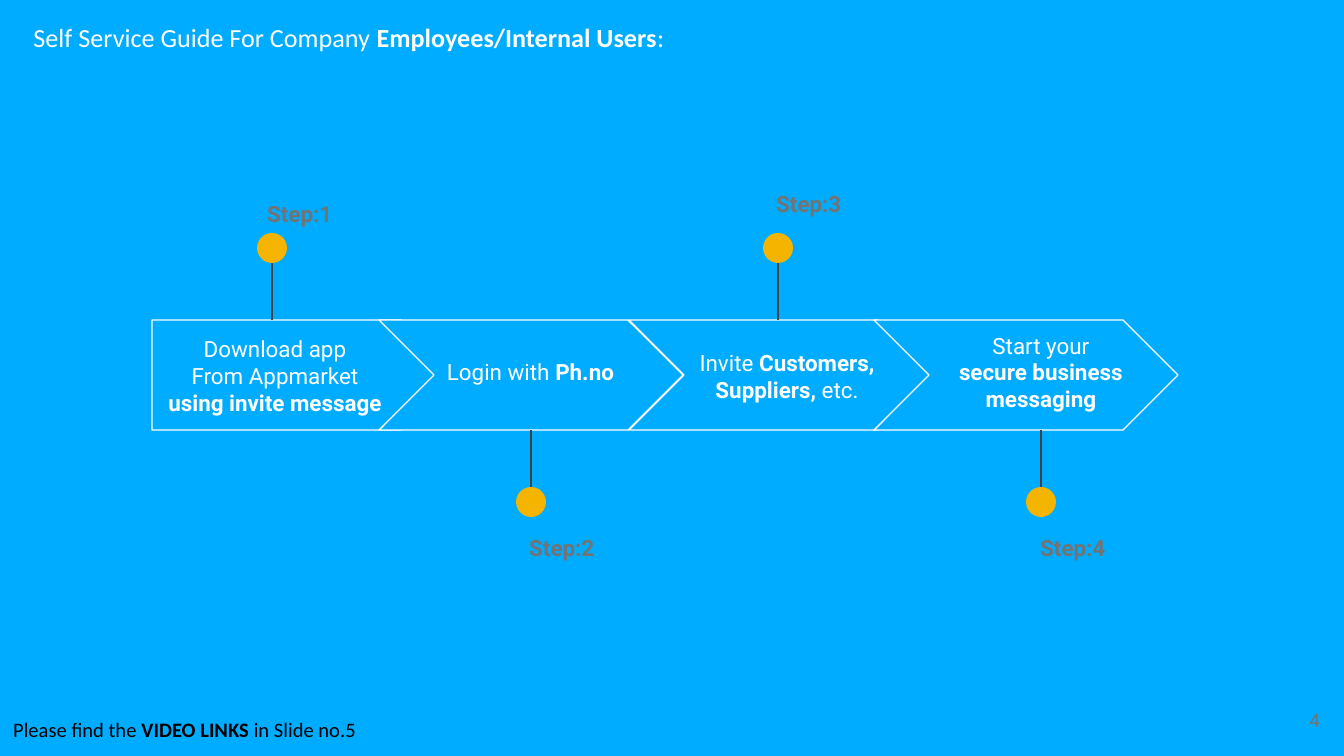
from lxml import etree
from pptx import Presentation
from pptx import util as u
from pptx.dml.color import RGBColor
from pptx.enum import shapes, text
from pptx.oxml.ns import qn

WIDE, HIGH = 1344, 756
SCALE = u.Inches(10) / WIDE
HUES = {"sky": "00ACFF", "white": "FFFFFF", "gold": "F4B400",
        "stem": "424242", "gray": "737373", "black": "000000"}
KIND = shapes.MSO_SHAPE
ALIGN = text.PP_ALIGN
ANCHOR = text.MSO_ANCHOR

BAR_TOP, BAR_WIDE, BAR_HIGH = 320, 304, 110
DOT = 30
STEM = 72


def px(*nums):
    return [u.Emu(round(n * SCALE)) for n in nums]


def hue(name):
    return RGBColor.from_string(HUES[name])


class Deck:
    def __init__(self):
        self.show = Presentation()
        self.show.slide_width, self.show.slide_height = px(WIDE, HIGH)
        self.slide = self.show.slides.add_slide(self.show.slide_layouts[5])
        self.items = self.slide.shapes
        fill = self.slide.background.fill
        fill.solid()
        fill.fore_color.rgb = hue("sky")

    def shape(self, kind, box, fill, line=None):
        item = self.items.add_shape(kind, *px(*box))
        item.shadow.inherit = False
        item.fill.solid()
        item.fill.fore_color.rgb = hue(fill)
        if line:
            item.line.color.rgb = hue(line)
            item.line.width = u.Pt(0.75)
        else:
            item.line.fill.background()
        return item

    def line(self, x, start, end):
        item = self.items.add_connector(
            shapes.MSO_CONNECTOR.STRAIGHT, *px(x, start, x, end))
        item.line.color.rgb = hue("stem")
        item.line.width = u.Pt(0.75)
        etree.SubElement(item._element.spPr, qn("a:effectLst"))

    def label(self, item, words, size, color, font="Roboto",
              align=ALIGN.LEFT, anchor=ANCHOR.TOP, space=None):
        """Fill a frame; words between asterisks are bold."""
        frame = item.text_frame
        frame.word_wrap = True
        frame.auto_size = text.MSO_AUTO_SIZE.NONE
        frame.vertical_anchor = anchor
        frame.margin_left = frame.margin_right = u.Inches(0.1)
        frame.margin_top = frame.margin_bottom = u.Inches(0.1)
        for i, row in enumerate(words.split("\n")):
            par = frame.add_paragraph() if i else frame.paragraphs[0]
            par.alignment = align
            par.line_spacing = space
            for j, part in enumerate(row.split("*")):
                if not part:
                    continue
                run = par.add_run()
                run.text = part
                run.font.name = font
                run.font.size = u.Pt(size)
                run.font.bold = j % 2 == 1
                run.font.color.rgb = hue(color)

    def text(self, box, words, size, color, **style):
        self.label(self.items.add_textbox(*px(*box)), words, size, color, **style)

    def title(self, box, words, size, color, **style):
        item = self.items.title
        self.items._spTree.append(item._element)  # in front of the band
        item.left, item.top, item.width, item.height = px(*box)
        self.label(item, words, size, color, **style)

    def pin(self, x, above):
        """Draw a stem with a dot at its far end, above or below the bar."""
        edge = BAR_TOP if above else BAR_TOP + BAR_HIGH
        tip = edge - STEM if above else edge + STEM
        self.line(x, edge, tip)
        self.shape(KIND.OVAL, (x - DOT // 2, tip - DOT // 2, DOT, DOT), "gold")


def main():
    deck = Deck()
    deck.shape(KIND.RECTANGLE, (0, -3, WIDE, 82), "sky")
    deck.title((20, 8, 663, 59), "Self Service Guide For Company "
               "*Employees/Internal Users*:", 14, "white", font="Calibri")

    # bar left, text box, words, pin x, label left and top
    steps = [
        (152, (152, 341, 246, 69),
         "Download app\nFrom Appmarket *using invite message*", 272, 254, 183),
        (379, (424, 337, 213, 69), "Login with *Ph.no*", 531, 516, 517),
        (629, (683, 349, 208, 54),
         "Invite *Customers, Suppliers,* etc.", 778, 763, 173),
        (874, (944, 345, 194, 54),
         "Start your *secure business messaging*", 1041, 1027, 517),
    ]
    for i, (left, box, words, x, side, top) in enumerate(steps):
        kind = KIND.CHEVRON if i else KIND.PENTAGON
        bar = deck.shape(kind, (left, BAR_TOP, BAR_WIDE, BAR_HIGH), "sky", "white")
        bar.adjustments[0] = 0.5
        deck.text(box, words, 12, "white", align=ALIGN.CENTER, anchor=ANCHOR.MIDDLE)
        deck.pin(x, above=i % 2 == 0)
        deck.text((side, top, 112, 54), f"*Step:{i + 1}*", 12, "gray", space=1.15)

    deck.text((0, 704, 387, 52), "Please find the *VIDEO LINKS* in Slide no.5",
              11, "black", font="Calibri")
    deck.text((1253, 691, 80, 58), "4", 10, "gray",
              align=ALIGN.RIGHT, anchor=ANCHOR.MIDDLE)
    deck.show.save("out.pptx")


if __name__ == "__main__":
    main()
